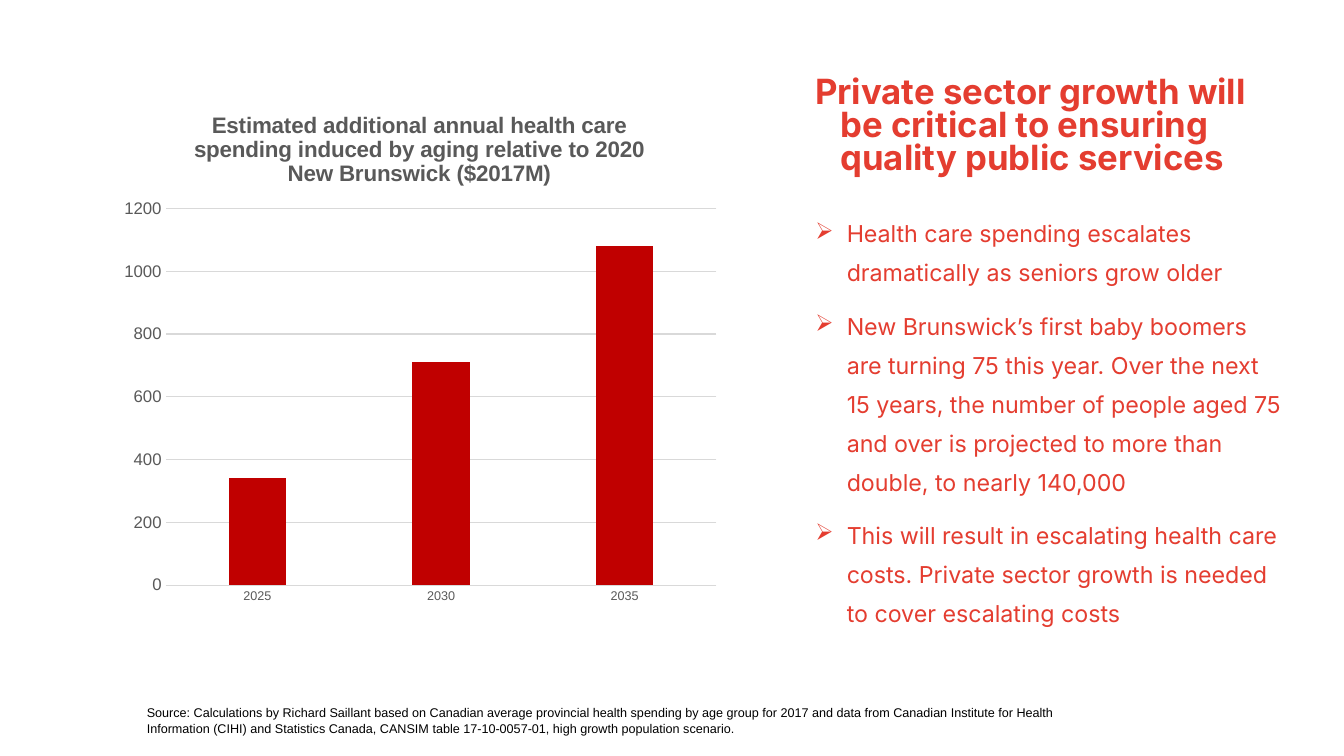
from dataclasses import dataclass

from lxml import etree
from pptx import Presentation
from pptx import util as u
from pptx.chart.data import CategoryChartData
from pptx.dml.color import RGBColor
from pptx.enum import chart as ch
from pptx.oxml import parse_xml
from pptx.oxml.ns import nsdecls, qn

RED = RGBColor(0xE4, 0x3D, 0x30)
BAR_RED = RGBColor(0xC0, 0x00, 0x00)
GREY = RGBColor(0x59, 0x59, 0x59)
GRID = RGBColor(0xD9, 0xD9, 0xD9)
BLACK = RGBColor(0, 0, 0)


@dataclass(frozen=True)
class Box:
    left: float
    top: float
    width: float
    height: float

    def lengths(self) -> list[u.Cm]:
        return [u.Cm(v) for v in (self.left, self.top, self.width, self.height)]


@dataclass(frozen=True)
class TextBlock:
    box: Box
    paragraphs: tuple[str, ...]
    font: str
    size: float
    color: RGBColor
    bold: bool = False
    line_spacing: float = 1.0
    space_before: float = 0
    margin: float = 0
    indent: float = 0
    bullet: str = ""


HEADLINE = TextBlock(
    Box(19.66, 1.83, 12.93, 3.3),
    ("Private sector growth will be critical to ensuring quality public services",),
    "Inter", 24.8, RED, bold=True, line_spacing=0.8, margin=1.27, indent=-0.64,
)
ARGUMENTS = TextBlock(
    Box(19.66, 5.13, 12.93, 11.46),
    (
        "Health care spending escalates dramatically as seniors grow older",
        "New Brunswick’s first baby boomers are turning 75 this year. Over the next "
        "15 years, the number of people aged 75 and over is projected to more than "
        "double, to nearly 140,000",
        "This will result in escalating health care costs. Private sector growth is "
        "needed to cover escalating costs",
    ),
    "Inter", 16.6, RED, line_spacing=1.4, space_before=10,
    margin=1.43, indent=-0.79, bullet="➢",
)
SOURCE = TextBlock(
    Box(3.45, 17.65, 24.87, 1.02),
    (
        "Source: Calculations by Richard Saillant based on Canadian average provincial "
        "health spending by age group for 2017 and data from Canadian Institute for "
        "Health Information (CIHI) and Statistics Canada, CANSIM table 17-10-0057-01, "
        "high growth population scenario.",
    ),
    "Arial", 9, BLACK,
)
CHART_BOX = Box(2.77, 2.29, 15.6, 13.18)
PLOT_SHARE = {"x": 0.09, "y": 0.225, "w": 0.89, "h": 0.72}
CHART_TITLE = ("Estimated additional annual health care spending induced by aging "
               "relative to 2020 New Brunswick ($2017M)")
SPENDING = {"2025": 340, "2030": 710, "2035": 1080}


def style_font(font, name: str, size: float, color: RGBColor, bold: bool = False) -> None:
    font.name, font.size, font.bold = name, u.Pt(size), bold
    font.color.rgb = color


def add_text(slide, block: TextBlock) -> None:
    frame = slide.shapes.add_textbox(*block.box.lengths()).text_frame
    frame.word_wrap = True
    for i, wording in enumerate(block.paragraphs):
        paragraph = frame.add_paragraph() if i else frame.paragraphs[0]
        paragraph.text = wording
        paragraph.line_spacing = block.line_spacing
        paragraph.space_before = u.Pt(block.space_before if i else 0)
        properties = paragraph._p.get_or_add_pPr()
        properties.set("marL", str(u.Cm(block.margin)))
        properties.set("indent", str(u.Cm(block.indent)))
        if block.bullet:
            color = etree.SubElement(properties, qn("a:buClr"))
            etree.SubElement(color, qn("a:srgbClr"), val=str(block.color))
            etree.SubElement(properties, qn("a:buChar"), char=block.bullet)
        style_font(paragraph.font, block.font, block.size, block.color, block.bold)


def fix_plot_area(chart) -> None:
    """Place the inner plot area by shares of the chart's size."""
    sizes = "".join(f'<c:{key} val="{share}"/>' for key, share in PLOT_SHARE.items())
    layout = parse_xml(
        f'<c:layout {nsdecls("c")}><c:manualLayout><c:layoutTarget val="inner"/>'
        f'<c:xMode val="edge"/><c:yMode val="edge"/>{sizes}</c:manualLayout></c:layout>'
    )
    plot_area = chart._chartSpace.chart.plotArea
    for old in plot_area.findall(qn("c:layout")):
        plot_area.remove(old)
    plot_area.insert(0, layout)


def add_spending_chart(slide) -> None:
    data = CategoryChartData(number_format="0")
    data.categories = list(SPENDING)
    data.add_series("Series 1", list(SPENDING.values()))
    chart = slide.shapes.add_chart(
        ch.XL_CHART_TYPE.COLUMN_CLUSTERED, *CHART_BOX.lengths(), data
    ).chart
    style_font(chart.font, "Arial", 10, BLACK)
    chart.has_legend = False
    title = chart.chart_title.text_frame
    title.text = CHART_TITLE
    style_font(title.paragraphs[0].font, "Arial", 16, GREY, bold=True)
    chart.chart_title.include_in_layout = False

    plot = chart.plots[0]
    plot.vary_by_categories = False
    plot.gap_width, plot.overlap = 219, -27
    bars = plot.series[0].format.fill
    bars.solid()
    bars.fore_color.rgb = BAR_RED

    years, amounts = chart.category_axis, chart.value_axis
    for axis, size in ((years, 9), (amounts, 12)):
        axis.major_tick_mark = axis.minor_tick_mark = ch.XL_TICK_MARK.NONE
        style_font(axis.tick_labels.font, "Arial", size, GREY)
    amounts.minimum_scale, amounts.maximum_scale, amounts.major_unit = 0, 1200, 200
    amounts.tick_labels.number_format = "0"
    amounts.tick_labels.number_format_is_linked = False
    amounts.format.line.fill.background()
    for line in (years.format.line, amounts.major_gridlines.format.line):
        line.color.rgb = GRID
        line.width = u.Pt(0.75)
    fix_plot_area(chart)


def main() -> None:
    deck = Presentation()
    deck.slide_width, deck.slide_height = u.Cm(33.87), u.Cm(19.05)
    slide = deck.slides.add_slide(deck.slide_layouts[6])
    add_spending_chart(slide)
    for block in (HEADLINE, ARGUMENTS, SOURCE):
        add_text(slide, block)
    deck.save("out.pptx")


if __name__ == "__main__":
    main()
